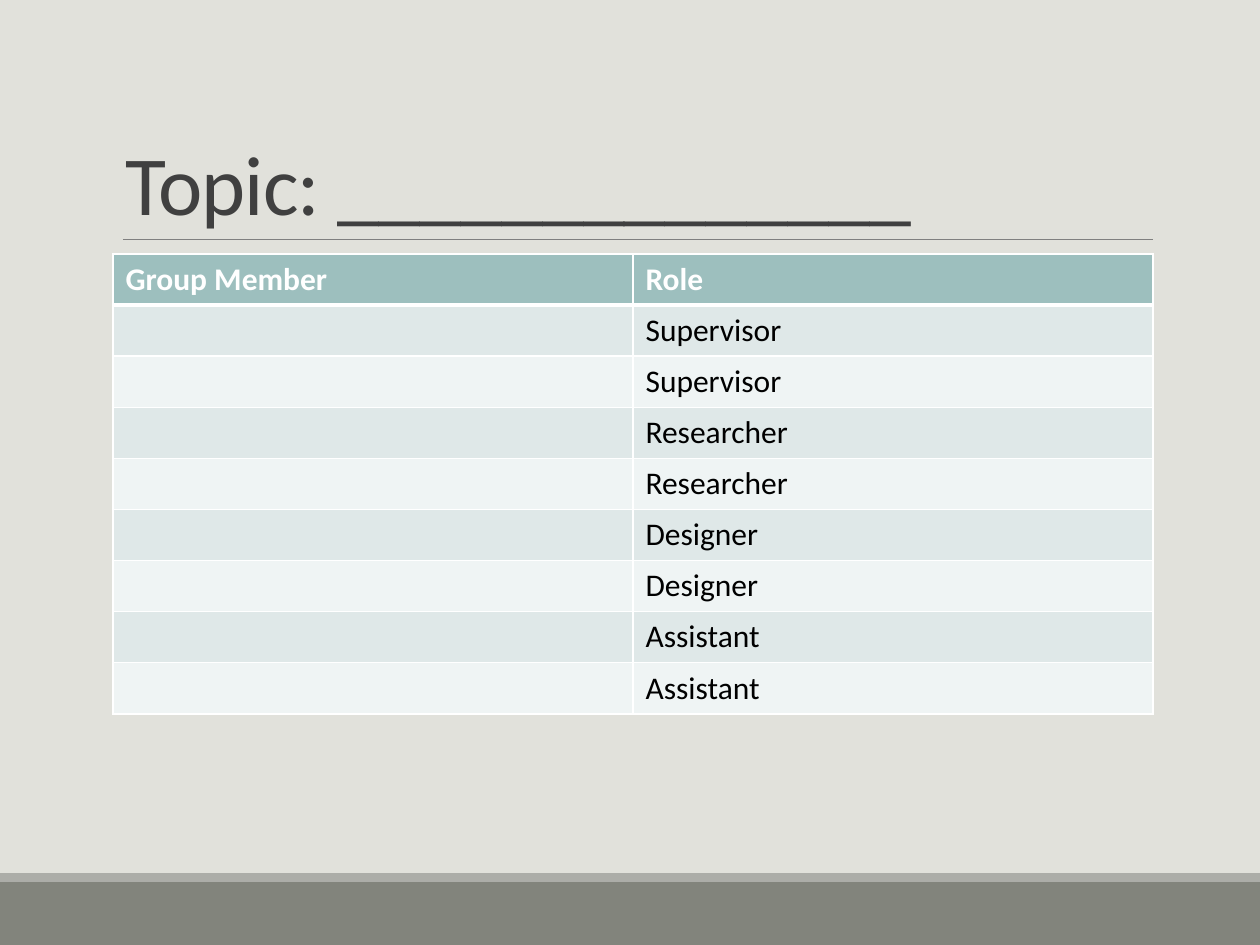
from lxml import etree
from pptx import Presentation
from pptx import util as u
from pptx.dml.color import RGBColor
from pptx.enum import shapes, text
from pptx.oxml import ns

# Content
TITLE = "Topic: ______________"
HEADER = ("Group Member", "Role")
ROLES = ("Supervisor", "Researcher", "Designer", "Assistant")
ROWS = [HEADER] + [("", role) for role in ROLES for _ in range(2)]

# Style
FONT = "Calibri"
COLORS = {
    "background": "E1E1DB", "footer": "82847C", "strip": "ACADA8",
    "rule": "808080", "title": "404040", "header": "9DBFBE",
    "odd": "DFE8E8", "even": "EFF4F4", "white": "FFFFFF", "black": "000000",
}
WIDTH, HEIGHT = 1260, 945
BANDS = (("footer", 882, 63), ("strip", 873, 9))
TABLE_LEFT, TABLE_TOP, TABLE_WIDTH, TABLE_HEIGHT = 113, 254, 1040, 460


def px(value):
    return u.Emu(round(value * 914400 / 126))


def color(name):
    return RGBColor.from_string(COLORS[name])


def paint(fill, name):
    fill.solid()
    fill.fore_color.rgb = color(name)


def add_run(paragraph, words, size, name, bold=False):
    run = paragraph.add_run()
    run.text = words
    run.font.name = FONT
    run.font.size = u.Pt(size)
    run.font.bold = bold
    run.font.color.rgb = color(name)
    return run


def add_borders(cell, bottom_width, top_width):
    properties = cell._tc.get_or_add_tcPr()
    for side, width in (("L", 1), ("R", 1), ("T", top_width), ("B", bottom_width)):
        line = etree.SubElement(properties, ns.qn(f"a:ln{side}"), w=str(u.Pt(width)))
        fill = etree.SubElement(line, ns.qn("a:solidFill"))
        etree.SubElement(fill, ns.qn("a:srgbClr"), val=COLORS["white"])


presentation = Presentation()
presentation.slide_width, presentation.slide_height = px(WIDTH), px(HEIGHT)
slide = presentation.slides.add_slide(presentation.slide_layouts[5])
paint(slide.background.fill, "background")

# Footer bands
for name, top, height in BANDS:
    band = slide.shapes.add_shape(
        shapes.MSO_SHAPE.RECTANGLE, 0, px(top), px(WIDTH), px(height))
    band.shadow.inherit = False
    paint(band.fill, name)
    band.line.fill.background()

# Rule under the title
rule = slide.shapes.add_connector(
    shapes.MSO_CONNECTOR.STRAIGHT, px(123), px(239), px(1153), px(239))
rule.line.color.rgb = color("rule")
rule.line.width = u.Pt(0.5)
etree.SubElement(rule._element.spPr, ns.qn("a:effectLst"))

# Title
title = slide.shapes.title
title.left, title.top, title.width, title.height = px(113), px(39), px(1040), px(200)
frame = title.text_frame
frame.word_wrap = True
frame.auto_size = text.MSO_AUTO_SIZE.NONE
frame.vertical_anchor = text.MSO_ANCHOR.BOTTOM
paragraph = frame.paragraphs[0]
paragraph.alignment = text.PP_ALIGN.LEFT
paragraph.line_spacing = 0.85
title_run = add_run(paragraph, TITLE, 48, "title")
title_run._r.get_or_add_rPr().set("spc", "-50")

# Table of members and roles
table = slide.shapes.add_table(
    len(ROWS), len(HEADER), px(TABLE_LEFT), px(TABLE_TOP),
    px(TABLE_WIDTH), px(TABLE_HEIGHT)).table
for row_index, row in enumerate(ROWS):
    is_header = row_index == 0
    fill_name = "header" if is_header else ("even", "odd")[row_index % 2]
    for column_index, words in enumerate(row):
        cell = table.cell(row_index, column_index)
        add_borders(cell, 3 if is_header else 1, 3 if row_index == 1 else 1)
        paint(cell.fill, fill_name)
        if words:
            add_run(cell.text_frame.paragraphs[0], words, 18,
                    "white" if is_header else "black", is_header)

presentation.save("out.pptx")
